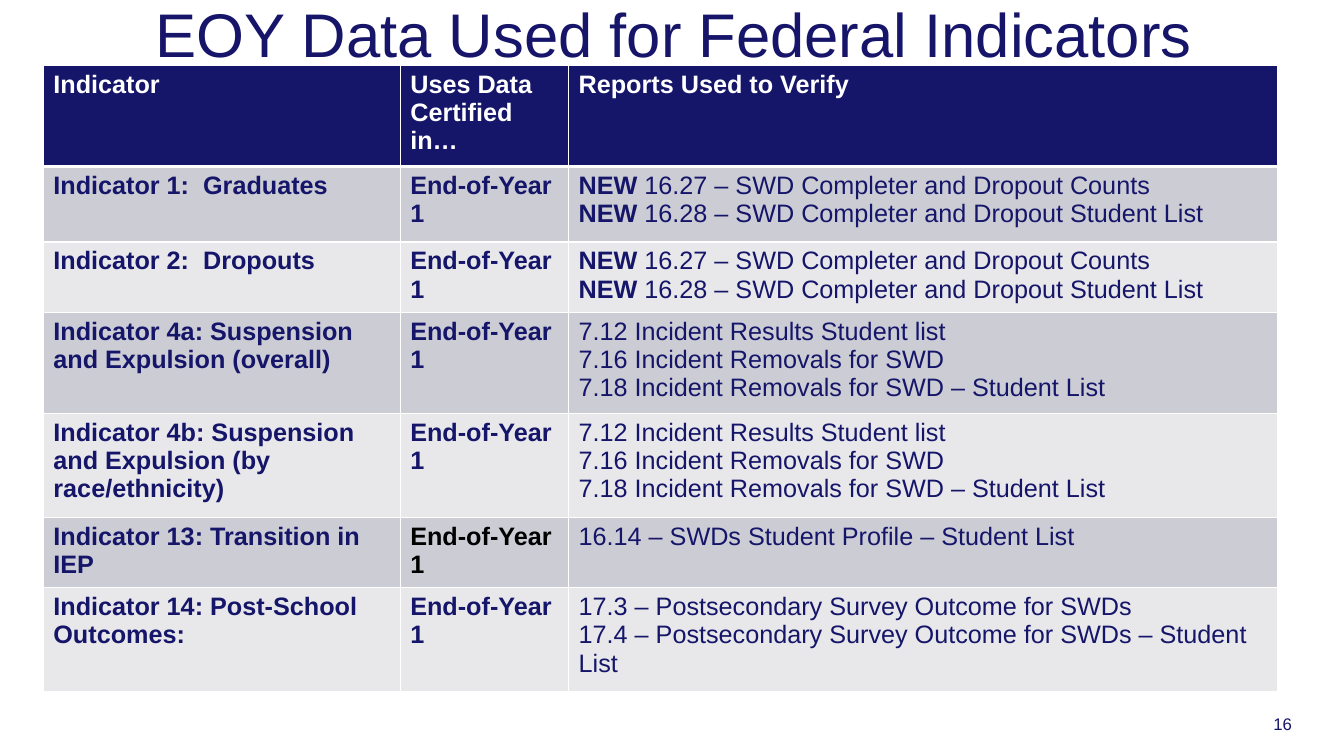
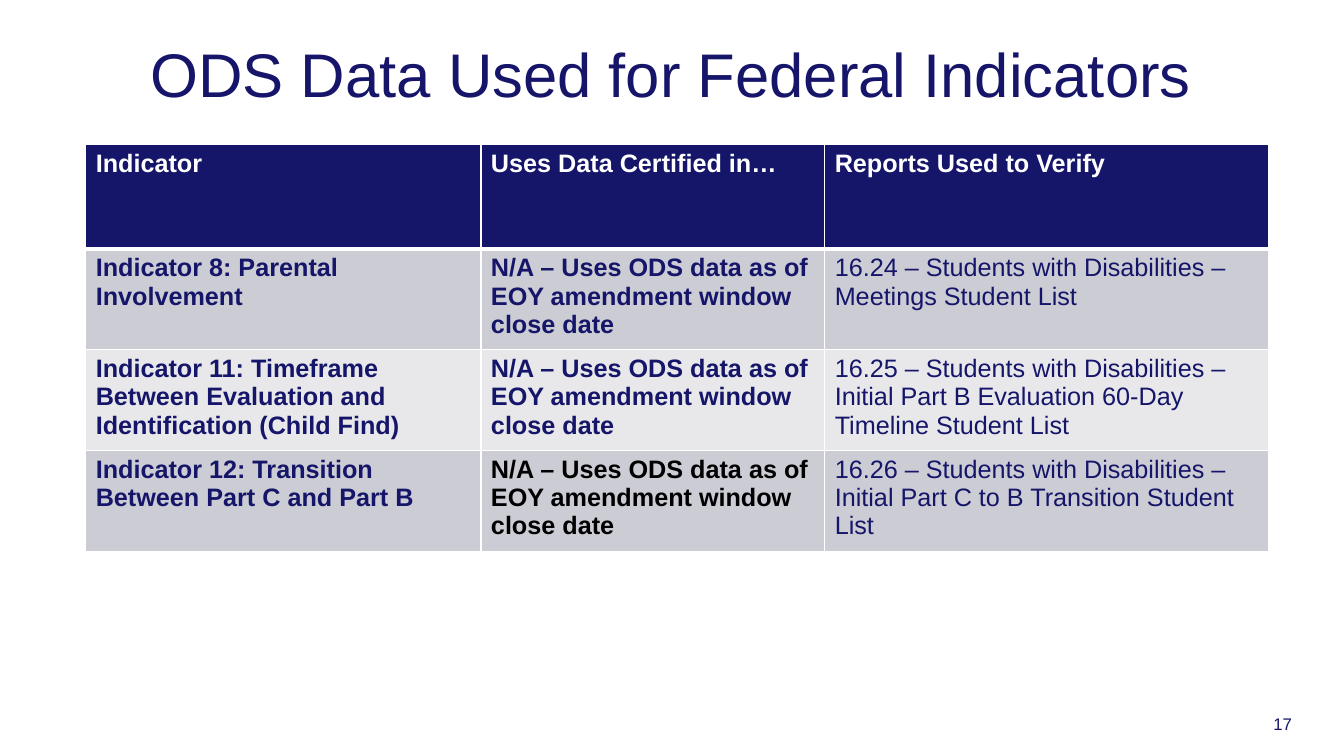
import pptx
import pptx.util
import pptx.dml.color
import pptx.enum.text
import pptx.oxml.ns
import lxml.etree

Inches = pptx.util.Inches
Pt = pptx.util.Pt
RGBColor = pptx.dml.color.RGBColor
Fit = pptx.enum.text.MSO_AUTO_SIZE

NAVY = RGBColor(0x15, 0x15, 0x69)
TITLE = RGBColor(0x16, 0x15, 0x69)
DARK = RGBColor(0xCC, 0xCC, 0xD4)
LIGHT = RGBColor(0xE8, 0xE8, 0xEB)
WHITE = RGBColor(0xFF, 0xFF, 0xFF)
BLACK = RGBColor(0x00, 0x00, 0x00)

HEAD = ("Indicator", "Uses Data Certified in…", ["Reports Used to Verify"])
YEAR = "End-of-Year 1"
ODS = "N/A – Uses ODS data as of EOY amendment window close date"
NEW = "NEW"
COUNTS = [
    "NEW 16.27 – SWD Completer and Dropout Counts",
    "NEW 16.28 – SWD Completer and Dropout Student List",
]
REMOVALS = [
    "7.12 Incident Results Student list",
    "7.16 Incident Removals for SWD",
    "7.18 Incident Removals for SWD – Student List",
]
SURVEY = [
    "17.3 – Postsecondary Survey Outcome for SWDs",
    "17.4 – Postsecondary Survey Outcome for SWDs – Student List",
]

SLIDES = [
    {
        "title": "EOY Data Used for Federal Indicators",
        "page": 16,
        "spot": (0.48, -0.22),
        "grid": (0.43, 0.65),
        "cols": (3.54, 1.67, 7.03),
        "highs": (0.93, 0.75, 0.66, 0.94, 1.03, 0.66, 1.03),
        "black": 5,
        "rows": [
            HEAD,
            ("Indicator 1:  Graduates", YEAR, COUNTS),
            ("Indicator 2:  Dropouts", YEAR, COUNTS),
            ("Indicator 4a: Suspension and Expulsion (overall)", YEAR, REMOVALS),
            ("Indicator 4b: Suspension and Expulsion (by race/ethnicity)", YEAR, REMOVALS),
            ("Indicator 13: Transition in IEP", YEAR,
             ["16.14 – SWDs Student Profile – Student List"]),
            ("Indicator 14: Post-School Outcomes:", YEAR, SURVEY),
        ],
    },
    {
        "title": "ODS Data Used for Federal Indicators",
        "page": 17,
        "spot": (0.45, 0.18),
        "grid": (0.85, 1.43),
        "cols": (3.92, 3.41, 4.4),
        "highs": (1.04, 0.93, 0.93, 0.93),
        "black": 3,
        "rows": [
            HEAD,
            ("Indicator 8: Parental Involvement", ODS,
             ["16.24 – Students with Disabilities – Meetings Student List"]),
            ("Indicator 11: Timeframe Between Evaluation and Identification (Child Find)", ODS,
             ["16.25 – Students with Disabilities – Initial Part B Evaluation 60-Day Timeline Student List"]),
            ("Indicator 12: Transition Between Part C and Part B", ODS,
             ["16.26 – Students with Disabilities – Initial Part C to B Transition Student List"]),
        ],
    },
]


def add_run(para, text, size, color, bold=False):
    """Append a formatted run to a paragraph."""
    run = para.add_run()
    run.text = text
    for name, value in {"name": "Arial", "size": Pt(size), "bold": bold}.items():
        setattr(run.font, name, value)
    run.font.color.rgb = color


def add_title(slide, text, spot):
    """Place and format the title placeholder."""
    shape = slide.shapes.title
    box = {"left": spot[0], "top": spot[1], "width": 12.42, "height": 1.18}
    for name, value in box.items():
        setattr(shape, name, Inches(value))
    frame = shape.text_frame
    look = {
        "auto_size": Fit.NONE,
        "word_wrap": True,
        "vertical_anchor": pptx.enum.text.MSO_ANCHOR.MIDDLE,
    }
    for name, value in look.items():
        setattr(frame, name, value)
    para = frame.paragraphs[0]
    para.alignment = pptx.enum.text.PP_ALIGN.CENTER
    para.line_spacing = 0.9
    add_run(para, text, 44, TITLE)


def add_page(slide, page):
    """Write the page number in the lower right corner."""
    box = slide.shapes.add_textbox(Inches(12.53), Inches(7.03), Inches(0.61), Inches(0.3))
    frame = box.text_frame
    frame.word_wrap = True
    frame.auto_size = Fit.SHAPE_TO_FIT_TEXT
    add_run(frame.paragraphs[0], str(page), 12, NAVY)


def add_edges(cell, row):
    """Draw white cell borders, thicker below the header row."""
    props = cell._tc.get_or_add_tcPr()
    widths = {"L": 1, "R": 1, "T": 3 if row == 1 else 1, "B": 3 if row == 0 else 1}
    qn = pptx.oxml.ns.qn
    for side, width in widths.items():
        line = lxml.etree.SubElement(props, qn("a:ln" + side), w=str(Pt(width)))
        fill = lxml.etree.SubElement(line, qn("a:solidFill"))
        lxml.etree.SubElement(fill, qn("a:srgbClr"), val=str(WHITE))


def fill_cell(cell, row, lines, color, bold):
    """Set the borders, fill and text of one cell."""
    add_edges(cell, row)
    cell.fill.solid()
    cell.fill.fore_color.rgb = NAVY if row == 0 else DARK if row % 2 else LIGHT
    frame = cell.text_frame
    for index, line in enumerate(lines):
        para = frame.add_paragraph() if index else frame.paragraphs[0]
        if line.startswith(NEW):
            add_run(para, NEW, 18, color, True)
            line = line[len(NEW):]
        add_run(para, line, 18, color, bold)


def add_grid(slide, data):
    """Add the indicator table."""
    cols, highs = data["cols"], data["highs"]
    left, top = data["grid"]
    table = slide.shapes.add_table(
        len(highs), len(cols), Inches(left), Inches(top),
        Inches(sum(cols)), Inches(sum(highs))).table
    for col, width in zip(table.columns, cols):
        col.width = Inches(width)
    for index, (name, source, reports) in enumerate(data["rows"]):
        table.rows[index].height = Inches(highs[index])
        base = NAVY if index else WHITE
        mid = BLACK if index == data["black"] else base
        fill_cell(table.cell(index, 0), index, [name], base, True)
        fill_cell(table.cell(index, 1), index, [source], mid, True)
        fill_cell(table.cell(index, 2), index, reports, base, index == 0)


def main():
    """Build and save the slides."""
    deck = pptx.Presentation()
    deck.slide_width = Inches(13.33)
    deck.slide_height = Inches(7.5)
    for data in SLIDES:
        slide = deck.slides.add_slide(deck.slide_layouts[5])
        add_page(slide, data["page"])
        add_title(slide, data["title"], data["spot"])
        add_grid(slide, data)
    deck.save("out.pptx")


if __name__ == "__main__":
    main()
